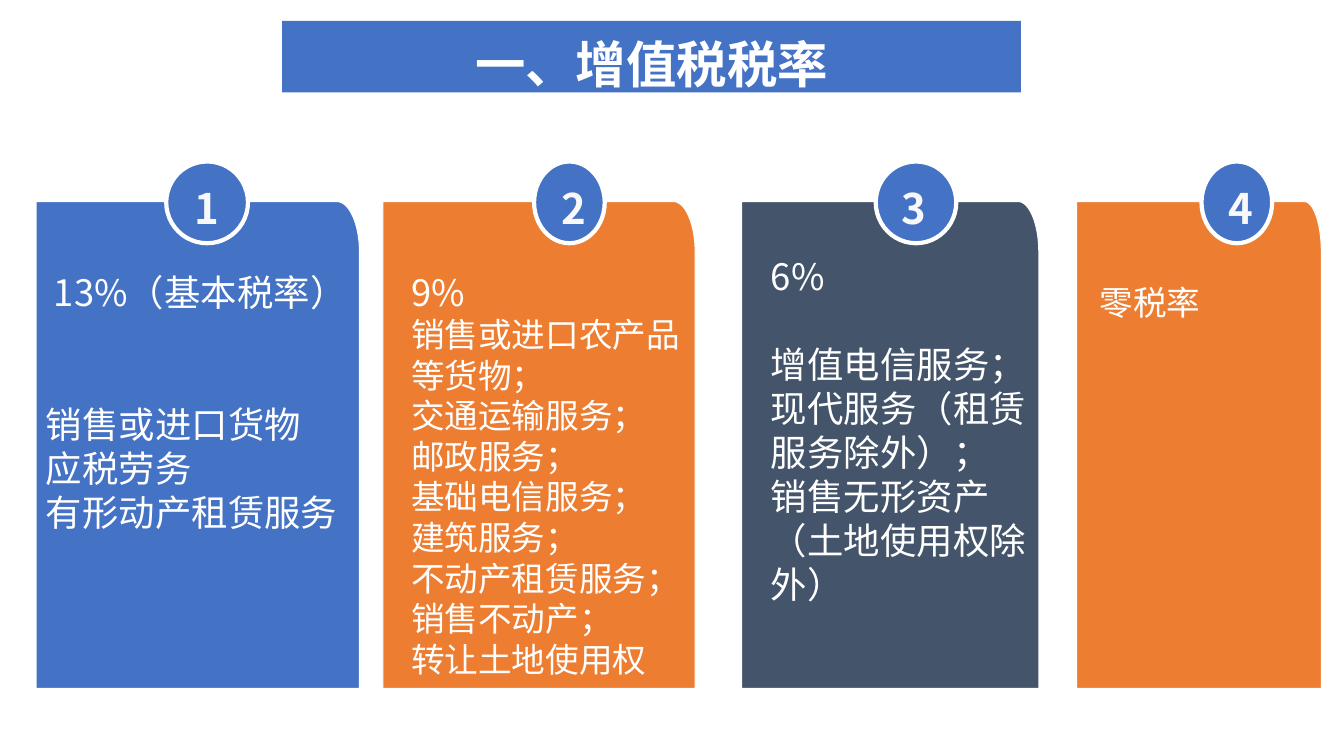
from dataclasses import dataclass
from math import cos, pi, sin

from pptx import Presentation
from pptx.dml.color import RGBColor
from pptx.enum.shapes import MSO_SHAPE
from pptx.enum.text import MSO_ANCHOR, PP_ALIGN
from pptx.oxml.ns import qn
from pptx.util import Cm, Pt


@dataclass(frozen=True)
class Theme:
    font: str = "Noto Sans CJK SC"
    blue: str = "4472C4"
    orange: str = "ED7D31"
    slate: str = "44546A"
    white: str = "FFFFFF"
    digit: str = "F8F8F8"
    title_size: int = 36
    number_size: int = 30
    large_size: int = 26
    body_size: int = 24
    line_height: float = 1.21
    top_offset: float = 0.12


@dataclass(frozen=True)
class Line:
    text: str
    size: int
    lines_before: int = 0
    indent: float = 0


@dataclass(frozen=True)
class Card:
    left: float
    width: float
    color: str
    circle: tuple
    number: tuple
    body: tuple
    lines: list


THEME = Theme()
CARD_TOP, CARD_HEIGHT, CORNER_HEIGHT, CORNER_RATIO = 5.08, 12.27, 1.27, 0.07
CIRCLE_TOP, CIRCLE_HEIGHT = 4.07, 2.06
NUMBER_TOP, NUMBER_HEIGHT = 4.34, 1.52
CURVE_STEPS = 24


def lines_of(size, *texts):
    return [Line(text, size) for text in texts]


CARDS = [
    Card(0.91, 8.15, THEME.blue, (4.19, 2.06), (4.57, 1.27), (0.91, 6.55, 8.71, 6.93), [
        Line("13%（基本税率）", THEME.large_size, indent=0.2),
        Line("销售或进口货物", THEME.large_size, lines_before=2),
        *lines_of(THEME.large_size, "应税劳务", "有形动产租赁服务"),
    ]),
    Card(9.65, 7.87, THEME.orange, (13.46, 1.78), (13.89, 1.12), (10.11, 6.55, 7.62, 11.63), [
        Line("9%", THEME.large_size),
        *lines_of(THEME.body_size, "销售或进口农产品等货物；", "交通运输服务；", "邮政服务；",
                  "基础电信服务；", "建筑服务；", "不动产租赁服务；", "销售不动产；",
                  "转让土地使用权"),
    ]),
    Card(18.69, 7.49, THEME.slate, (22.07, 2.03), (22.4, 1.27), (19.18, 6.15, 7.29, 11.38), [
        Line("6%", THEME.large_size),
        Line("增值电信服务；", THEME.large_size, lines_before=1),
        *lines_of(THEME.large_size, "现代服务（租赁服务除外）；",
                  "销售无形资产（土地使用权除外）"),
    ]),
    Card(27.13, 6.17, THEME.orange, (30.28, 1.78), (30.71, 1.12), (27.46, 6.86, 5.84, 1.27),
         lines_of(THEME.body_size, "零税率")),
]


def apply_format(target, values):
    for name, value in values.items():
        setattr(target, name, value)


def paint(shape, fill, line_width):
    shape.shadow.inherit = False
    shape.fill.solid()
    shape.fill.fore_color.rgb = RGBColor.from_string(fill)
    if line_width:
        shape.line.color.rgb = RGBColor.from_string(THEME.white)
        shape.line.width = Pt(line_width)
    else:
        shape.line.fill.background()


def write_lines(shape, lines, color=THEME.white, bold=False, align=PP_ALIGN.LEFT):
    frame = shape.text_frame
    apply_format(frame, {
        "word_wrap": True,
        "vertical_anchor": MSO_ANCHOR.TOP,
        "margin_top": Cm(0.13) + Pt(lines[0].size * THEME.top_offset),
        "margin_bottom": 0,
    })
    for index, line in enumerate(lines):
        paragraph = frame.add_paragraph() if index else frame.paragraphs[0]
        spacing = Pt(line.size * THEME.line_height)
        apply_format(paragraph, {"alignment": align, "line_spacing": spacing})
        if line.lines_before:
            paragraph.space_before = spacing * line.lines_before
        if line.indent:
            paragraph._p.get_or_add_pPr().set("marL", str(Cm(line.indent)))
        run = paragraph.add_run()
        run.text = line.text
        apply_format(run.font, {"name": THEME.font, "size": Pt(line.size), "bold": bold})
        run.font.color.rgb = RGBColor.from_string(color)
        east_asian = run._r.get_or_add_rPr().makeelement(qn("a:ea"), {"typeface": THEME.font})
        run.font._element.find(qn("a:latin")).addnext(east_asian)


def add_text(slide, box, lines, **formats):
    write_lines(slide.shapes.add_textbox(*map(Cm, box)), lines, **formats)


def add_panel(slide, card):
    right, bottom = card.left + card.width, CARD_TOP + CARD_HEIGHT
    corner_width = card.width * CORNER_RATIO
    angles = [pi / 2 * step / CURVE_STEPS for step in range(CURVE_STEPS + 1)]
    curve = [(right - corner_width * (1 - sin(angle)),
              CARD_TOP + CORNER_HEIGHT * (1 - cos(angle))) for angle in angles]
    outline = curve + [(right, bottom), (card.left, bottom)]
    builder = slide.shapes.build_freeform(Cm(card.left), Cm(CARD_TOP))
    builder.add_line_segments([(Cm(x), Cm(y)) for x, y in outline], close=True)
    paint(builder.convert_to_shape(), card.color, 0.75)


def add_badge(slide, card, number):
    left, width = card.circle
    circle = slide.shapes.add_shape(
        MSO_SHAPE.OVAL, Cm(left), Cm(CIRCLE_TOP), Cm(width), Cm(CIRCLE_HEIGHT))
    paint(circle, THEME.blue, 3)
    left, width = card.number
    add_text(slide, (left, NUMBER_TOP, width, NUMBER_HEIGHT),
             lines_of(THEME.number_size, str(number)),
             color=THEME.digit, bold=True, align=PP_ALIGN.CENTER)


def add_title(slide, text):
    banner = slide.shapes.add_shape(
        MSO_SHAPE.RECTANGLE, Cm(7.11), Cm(0.53), Cm(18.62), Cm(1.8))
    paint(banner, THEME.blue, 0)
    write_lines(banner, lines_of(THEME.title_size, text), bold=True, align=PP_ALIGN.CENTER)


def main():
    presentation = Presentation()
    apply_format(presentation, {"slide_width": Cm(33.87), "slide_height": Cm(19.05)})
    slide = presentation.slides.add_slide(presentation.slide_layouts[6])
    add_title(slide, "一、增值税税率")
    for number, card in enumerate(CARDS, start=1):
        add_panel(slide, card)
        add_badge(slide, card, number)
        add_text(slide, card.body, card.lines)
    presentation.save("out.pptx")


if __name__ == "__main__":
    main()
